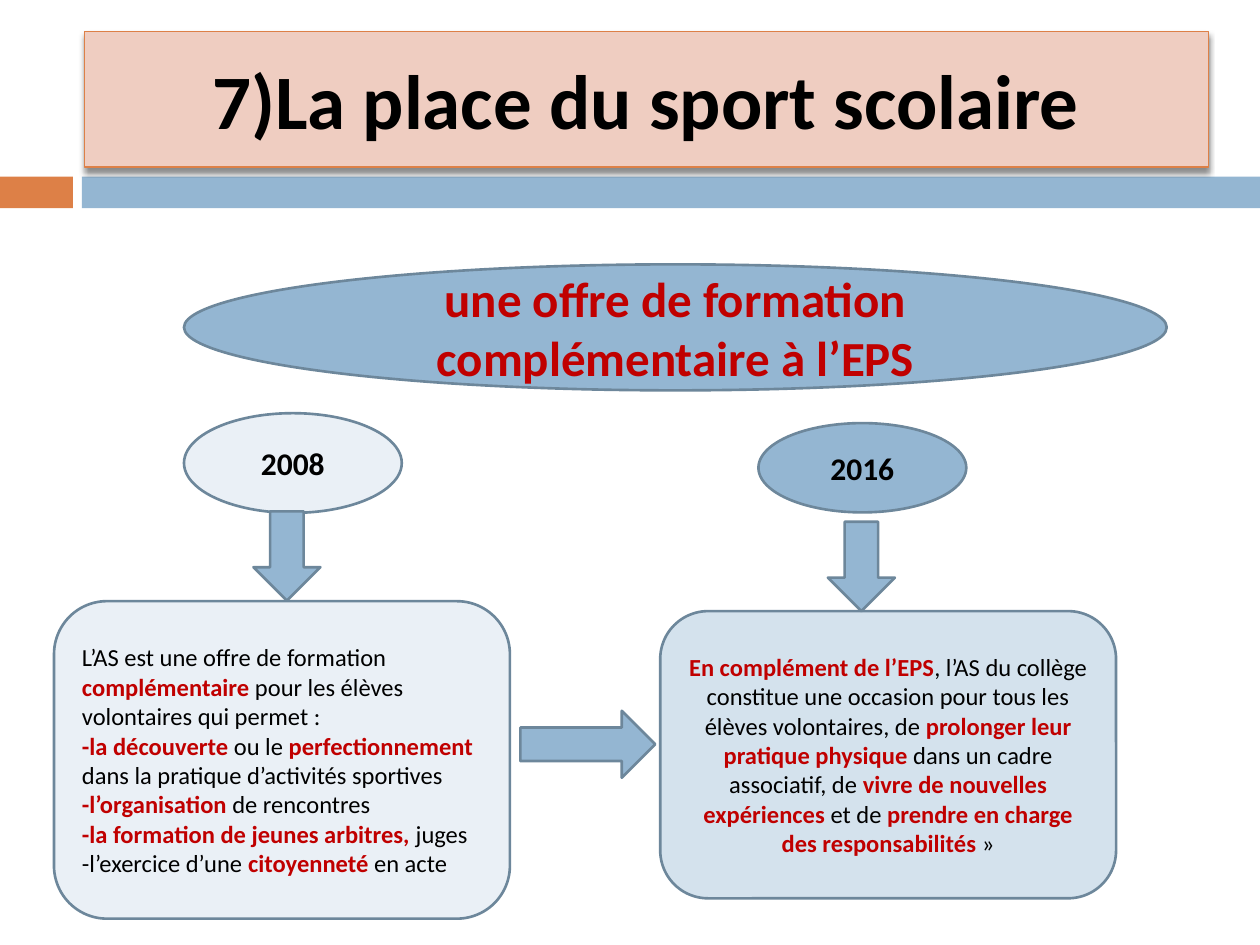
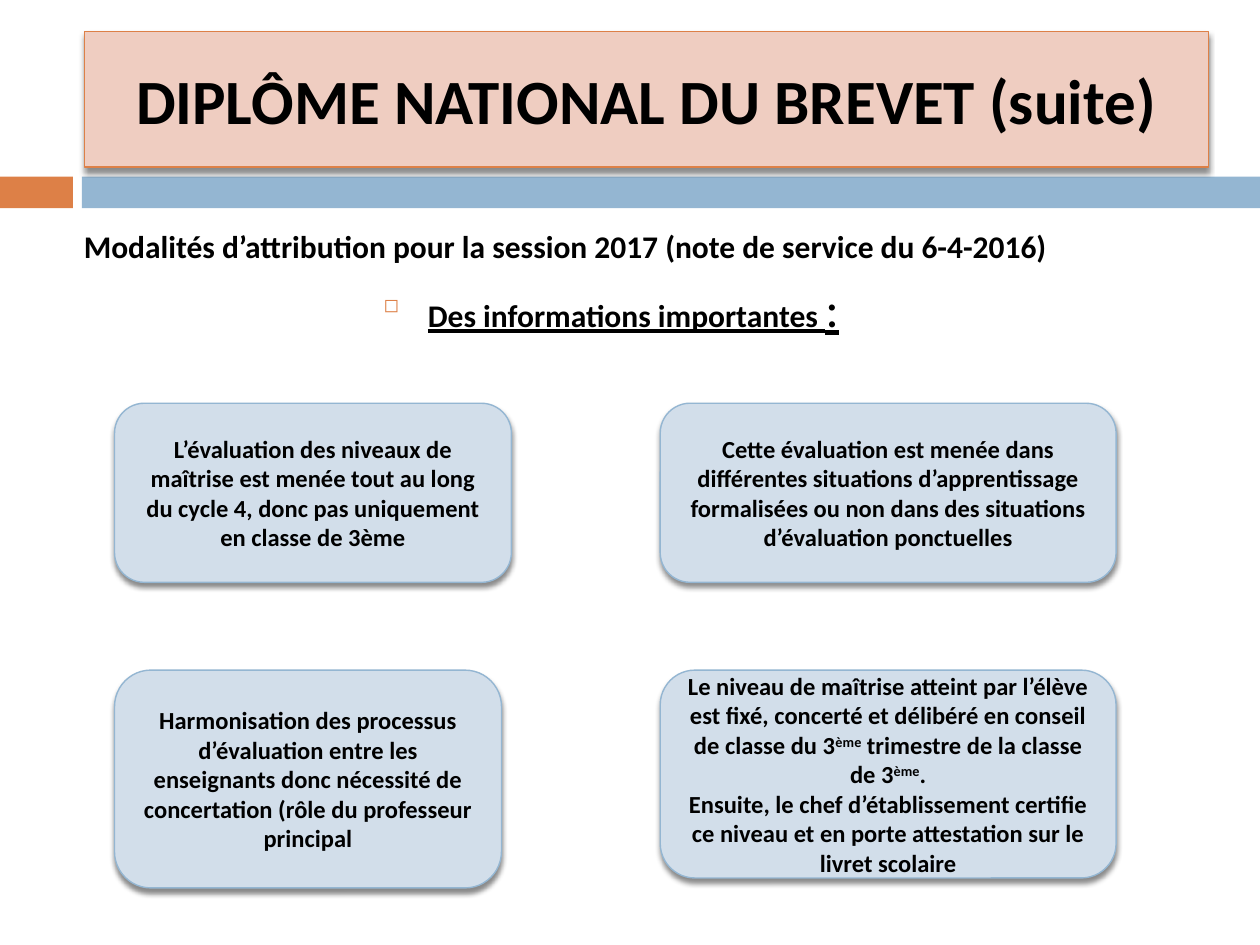
from lxml import etree
from pptx import Presentation
from pptx.dml.color import RGBColor
from pptx.enum.shapes import MSO_SHAPE
from pptx.enum.text import MSO_ANCHOR, PP_ALIGN
from pptx.oxml.ns import qn
from pptx.util import Cm, Pt

RECT, ROUND, OVAL = MSO_SHAPE.RECTANGLE, MSO_SHAPE.ROUNDED_RECTANGLE, MSO_SHAPE.OVAL
DOWN, RIGHT = MSO_SHAPE.DOWN_ARROW, MSO_SHAPE.RIGHT_ARROW
LEFT, CENTER = PP_ALIGN.LEFT, PP_ALIGN.CENTER
MIDDLE = MSO_ANCHOR.MIDDLE

ORANGE, BLUE, SLATE = "DD8047", "94B6D2", "6D879B"
PEACH, PALE, ICE, MIST = "EFCDC1", "EAF0F6", "D4E2ED", "D2DEEA"
BLACK, RED = "000000", "C00000"
RED_BOLD = {"color": RED, "bold": True}
RAISED = {"baseline": 30000}

rgb = RGBColor.from_string


def add_text(tf, text, align=CENTER, accent=RED_BOLD, **fmt):
    for line in text.split("\n"):
        p = tf.paragraphs[0] if not tf.paragraphs[0].runs else tf.add_paragraph()
        p.alignment = align
        for i, part in enumerate(line.split("|")):
            if not part:
                continue
            style = {**fmt, **accent} if i % 2 else fmt
            r = p.add_run()
            r.text = part
            r.font.name = "Calibri"
            r.font.size = Pt(style["size"])
            r.font.bold = style.get("bold", False)
            r.font.underline = style.get("underline", False)
            r.font.color.rgb = rgb(style.get("color", BLACK))
            if "baseline" in style:
                r.font._element.set("baseline", str(style["baseline"]))
    return p


def add_box(s, kind, at, fill, line=None, width=1.5, shadow=False):
    sp = s.shapes.add_shape(kind, *[Cm(v) for v in at])
    sp.shadow.inherit = False
    sp.fill.solid()
    sp.fill.fore_color.rgb = rgb(fill)
    if line:
        sp.line.color.rgb = rgb(line)
        sp.line.width = Pt(width)
    else:
        sp.line.fill.background()
    if shadow:
        effects = sp._element.spPr.find(qn("a:effectLst"))
        outer = etree.SubElement(effects, qn("a:outerShdw"), blurRad=str(Pt(3)),
                                 dist=str(Pt(2.4)), dir="5400000", rotWithShape="0")
        clr = etree.SubElement(outer, qn("a:srgbClr"), val=BLACK)
        etree.SubElement(clr, qn("a:alpha"), val="45000")
    tf = sp.text_frame
    tf.word_wrap = True
    tf.vertical_anchor = MIDDLE
    return tf


prs = Presentation()
prs.slide_width, prs.slide_height = Cm(25.4), Cm(19.05)

slides = []
for title, size in [("7)La place du sport scolaire", 44),
                    ("DIPLÔME NATIONAL DU BREVET (suite)", 36)]:
    s = prs.slides.add_slide(prs.slide_layouts[6])
    add_box(s, RECT, (0, 3.56, 1.47, 0.64), ORANGE)
    add_box(s, RECT, (1.65, 3.56, 23.75, 0.64), BLUE)
    tf = add_box(s, RECT, (1.7, 0.63, 22.66, 2.74), PEACH, ORANGE, 0.79, True)
    add_text(tf, title, size=size, bold=True)
    slides.append(s)
sport, brevet = slides

as_2008 = """L’AS est une offre de formation |complémentaire |pour les élèves volontaires qui permet :
|-la découverte |ou le |perfectionnement| dans la pratique d’activités sportives
|-l’organisation |de rencontres
|-la formation de jeunes arbitres, |juges
-l’exercice d’une |citoyenneté| en acte"""
as_2016 = (
    "|En complément de l’EPS|, l’AS du collège constitue une occasion pour tous les "
    "élèves volontaires, de |prolonger leur pratique physique |dans un cadre associatif, "
    "de |vivre de nouvelles expériences |et de |prendre en charge des responsabilités |»"
)

for kind, at, fill, text, align, fmt in [
    (OVAL, (3.71, 5.33, 19.81, 2.54), BLUE, "une offre de formation complémentaire à l’EPS",
     CENTER, {"size": 28, **RED_BOLD}),
    (OVAL, (3.71, 8.33, 4.39, 2.01), PALE, "2008", CENTER, {"size": 18, "bold": True}),
    (ROUND, (1.09, 12.12, 9.19, 6.4), PALE, as_2008, LEFT, {"size": 14}),
    (OVAL, (15.29, 8.53, 4.19, 1.8), BLUE, "2016", CENTER, {"size": 18, "bold": True}),
    (ROUND, (13.31, 12.32, 9.19, 5.79), ICE, as_2016, CENTER, {"size": 14}),
]:
    tf = add_box(sport, kind, at, fill, SLATE)
    add_text(tf, text, align, **fmt)

for kind, at in [(DOWN, (5.11, 10.31, 1.35, 1.8)),
                 (DOWN, (16.69, 10.52, 1.35, 1.8)),
                 (RIGHT, (10.49, 14.33, 2.72, 1.35))]:
    add_box(sport, kind, at, BLUE, SLATE)

tf = brevet.shapes.add_textbox(Cm(0.3), Cm(4.45), Cm(24.05), Cm(13.87)).text_frame
tf.word_wrap = True
p = add_text(tf, "Modalités d’attribution pour la session 2017 (note de service du 6-4-2016)",
             LEFT, size=18, bold=True)
p.space_before = Pt(7)
p._p.get_or_add_pPr().set("marL", str(Cm(1.14)))
p = add_text(tf, "Des informations importantes |:", accent={"size": 29, "bold": False},
             size=18, bold=True, underline=True)
p.space_before = Pt(7)
pPr = p._p.get_or_add_pPr()
pPr.set("marL", str(Cm(0.89)))
pPr.set("indent", str(-Cm(0.89)))
etree.SubElement(etree.SubElement(pPr, qn("a:buClr")), qn("a:srgbClr"), val=ORANGE)
etree.SubElement(pPr, qn("a:buSzPct"), val="60000")
etree.SubElement(pPr, qn("a:buChar"), char="◻")

left, right, top, bottom = 2.31, 13.31, 8.13, 13.51
for at, text in [
    ((left, top, 8, 3.61),
     "L’évaluation des niveaux de maîtrise est menée tout au long du cycle 4, "
     "donc pas uniquement en classe de 3ème"),
    ((right, bottom, 9.19, 4.19),
     "Le niveau de maîtrise atteint par l’élève est fixé, concerté et délibéré en conseil "
     "de classe du 3|ème| trimestre de la classe de 3|ème|.\n"
     "Ensuite, le chef d’établissement certifie ce niveau et en porte attestation "
     "sur le livret scolaire"),
    ((right, top, 9.19, 3.61),
     "Cette évaluation est menée dans différentes situations d’apprentissage formalisées "
     "ou non dans des situations d’évaluation ponctuelles"),
    ((left, bottom, 7.8, 4.39),
     "Harmonisation des processus d’évaluation entre les enseignants donc nécessité de "
     "concertation (rôle du professeur principal"),
]:
    tf = add_box(brevet, ROUND, at, MIST, BLUE, 0.79, True)
    add_text(tf, text, accent=RAISED, size=14, bold=True)

prs.save("out.pptx")
